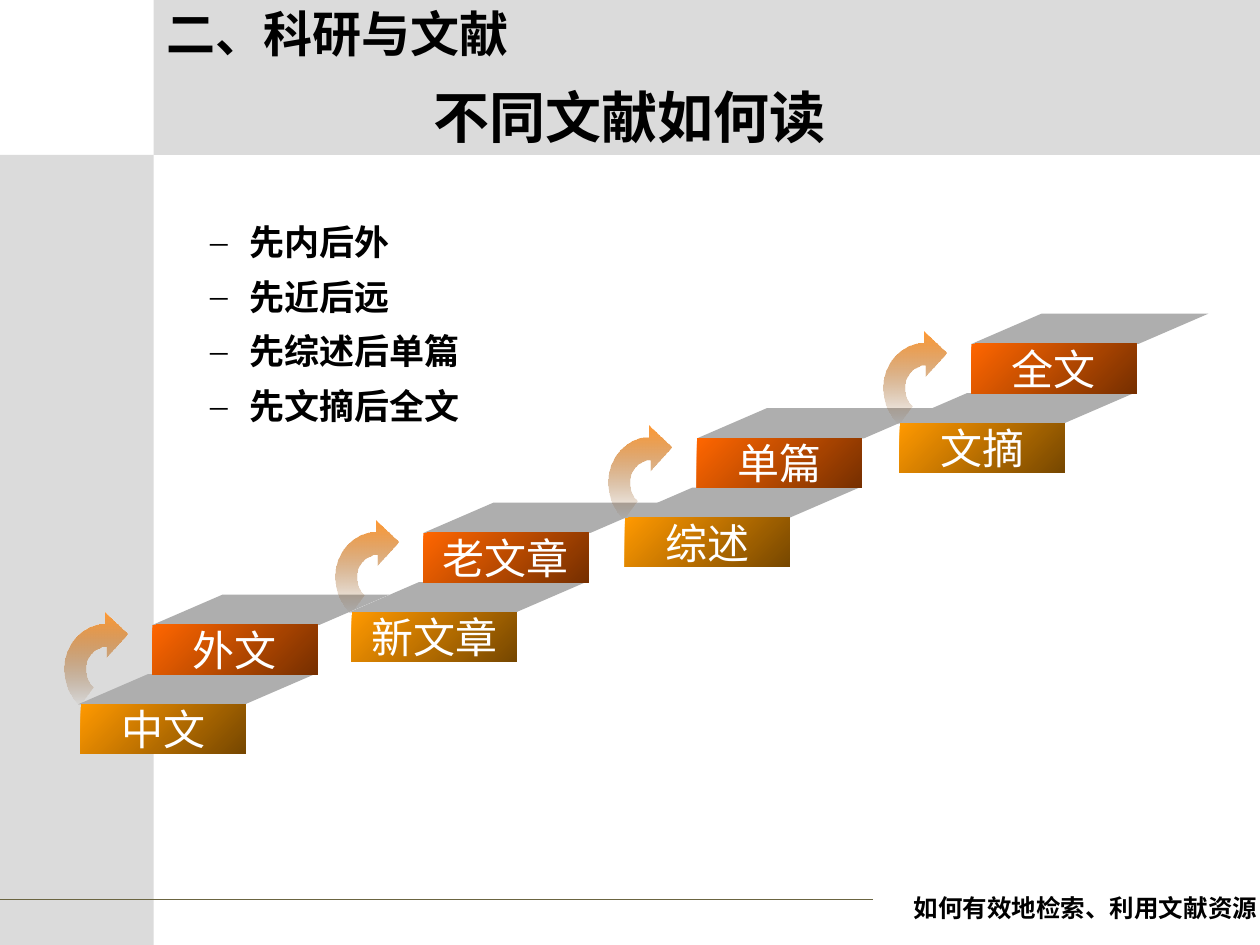
import dataclasses

import pptx
import pptx.dml.color
import pptx.enum.shapes
import pptx.enum.text
import pptx.oxml.ns
import pptx.util
from lxml import etree

Inches = pptx.util.Inches
Pt = pptx.util.Pt
qn = pptx.oxml.ns.qn
SHAPES = pptx.enum.shapes.MSO_SHAPE
ALIGN = pptx.enum.text.PP_ALIGN
MIDDLE = pptx.enum.text.MSO_ANCHOR.MIDDLE

SANS, SERIF = "Noto Sans CJK SC", "Times New Roman"
BLACK, WHITE, PANEL, TREAD = "000000", "FFFFFF", "DBDBDB", "AEAEAE"
LOWER_COLORS = ("FF9900", "764700")
UPPER_COLORS = ("FF6600", "762F00")
ARROW_COLORS = ("FF9933", "764718")
BLOCK_WIDTH, BLOCK_HEIGHT = 1.31, 0.39
TREAD_WIDTH, TREAD_HEIGHT = 1.88, 0.24
STEP_RIGHT, STEP_UP = 0.57, 0.63

# Arrow outline, measured from the top left of the lower block:
# after the start, one point makes a straight line, three make a Bézier curve
ARROW_START = (0.20, -0.46)
ARROW_SEGMENTS = [
    [(0.11, -0.46), (0.03, -0.37), (0.04, -0.27)],
    [(0.04, -0.22), (0.06, -0.17), (0.10, -0.14)],
    [(-0.01, 0.01)],
    [(-0.08, -0.06), (-0.13, -0.16), (-0.13, -0.27)],
    [(-0.14, -0.47), (0.01, -0.64), (0.19, -0.64)],
    [(0.19, -0.73)],
    [(0.37, -0.56)],
    [(0.20, -0.37)],
    [ARROW_START],
]


@dataclasses.dataclass
class Stair:
    left: float
    top: float
    first: str
    then: str


STAIRS = [
    Stair(0.64, 5.59, "中文", "外文"),
    Stair(2.79, 4.86, "新文章", "老文章"),
    Stair(4.96, 4.11, "综述", "单篇"),
    Stair(7.14, 3.36, "文摘", "全文"),
]
READING_RULES = ["先内后外", "先近后远", "先综述后单篇", "先文摘后全文"]


def rgb(color: str) -> pptx.dml.color.RGBColor:
    return pptx.dml.color.RGBColor.from_string(color)


def format_text(paragraph, size: float, font: str, color: str, bold: bool, align=ALIGN.LEFT) -> None:
    paragraph.alignment = align
    for run in paragraph.runs:
        run.font.size = Pt(size)
        run.font.name = font
        run.font.bold = bold
        run.font.color.rgb = rgb(color)
        east_asian = etree.SubElement(run.font._element, qn("a:ea"))
        east_asian.set("typeface", SANS)


def add_filled(shapes, kind, left: float, top: float, width: float, height: float, color: str):
    shape = shapes.add_shape(kind, Inches(left), Inches(top), Inches(width), Inches(height))
    shape.shadow.inherit = False
    shape.fill.solid()
    shape.fill.fore_color.rgb = rgb(color)
    shape.line.fill.background()
    return shape


def fill_gradient(shape, colors: tuple, clockwise_angle: float) -> None:
    shape.fill.gradient()
    shape.fill.gradient_angle = 360 - clockwise_angle
    for stop, color, position in zip(shape.fill.gradient_stops, colors, (0, 1)):
        stop.color.rgb = rgb(color)
        stop.position = position


def add_block(shapes, left: float, top: float, text: str, colors: tuple) -> None:
    block = add_filled(shapes, SHAPES.RECTANGLE, left, top, BLOCK_WIDTH, BLOCK_HEIGHT, colors[0])
    fill_gradient(block, colors, 45)
    frame = block.text_frame
    frame.text = text
    frame.word_wrap = False
    frame.vertical_anchor = MIDDLE
    format_text(frame.paragraphs[0], 24, SANS, WHITE, False, ALIGN.CENTER)


def add_tread(shapes, left: float, block_top: float) -> None:
    tread = add_filled(shapes, SHAPES.PARALLELOGRAM, left, block_top - TREAD_HEIGHT,
                       TREAD_WIDTH, TREAD_HEIGHT, TREAD)
    tread.adjustments[0] = 2.313


def bend_segments(shape, segments: list) -> None:
    """Join each three straight pieces of a curved segment into one Bézier curve."""
    lines = iter(list(shape._element.spPr.iter(qn("a:lnTo"))))
    for segment in segments:
        pieces = [next(lines) for _ in segment]
        if len(pieces) == 3:
            curve = etree.Element(qn("a:cubicBezTo"))
            pieces[0].addprevious(curve)
            for piece in pieces:
                curve.append(piece[0])
                piece.getparent().remove(piece)


def add_arrow(shapes, left: float, top: float) -> None:
    def place(point: tuple) -> tuple:
        return Inches(left + point[0]), Inches(top + point[1])

    builder = shapes.build_freeform(*place(ARROW_START))
    builder.add_line_segments([place(point) for segment in ARROW_SEGMENTS for point in segment],
                              close=True)
    arrow = builder.convert_to_shape()
    bend_segments(arrow, ARROW_SEGMENTS)
    arrow.shadow.inherit = False
    fill_gradient(arrow, ARROW_COLORS, 90)
    # The lower end of the gradient is fully transparent
    last_color = list(arrow._element.spPr.iter(qn("a:srgbClr")))[-1]
    etree.SubElement(last_color, qn("a:alpha")).set("val", "0")
    arrow.line.fill.background()


def add_stair(slide, stair: Stair) -> None:
    shapes = slide.shapes.add_group_shape().shapes
    upper_left, upper_top = stair.left + STEP_RIGHT, stair.top - STEP_UP
    add_tread(shapes, stair.left - 0.02, stair.top)
    add_block(shapes, stair.left, stair.top, stair.first, LOWER_COLORS)
    add_tread(shapes, upper_left, upper_top)
    add_block(shapes, upper_left, upper_top, stair.then, UPPER_COLORS)
    add_arrow(shapes, stair.left, stair.top)


def add_text_box(slide, left: float, top: float, width: float, height: float):
    box = slide.shapes.add_textbox(Inches(left), Inches(top), Inches(width), Inches(height))
    box.text_frame.word_wrap = True
    return box.text_frame


def add_label(slide, place: tuple, text: str, size: float, align):
    frame = add_text_box(slide, *place)
    frame.vertical_anchor = MIDDLE
    frame.text = text
    format_text(frame.paragraphs[0], size, SERIF, BLACK, True, align)
    return frame


def add_rules(slide) -> None:
    frame = add_text_box(slide, 1.07, 1.59, 9.08, 5.17)
    frame.margin_top = Inches(0.06)
    frame.text = "\n".join(READING_RULES)
    for paragraph in frame.paragraphs:
        paragraph.level = 1
        paragraph.line_spacing = Pt(31.2)
        properties = paragraph._p.get_or_add_pPr()
        properties.set("marL", str(Inches(0.81)))
        properties.set("indent", str(Inches(-0.31)))
        etree.SubElement(properties, qn("a:buFont")).set("typeface", SERIF)
        etree.SubElement(properties, qn("a:buChar")).set("char", "–")
        format_text(paragraph, 20, SANS, BLACK, True)


def main() -> None:
    presentation = pptx.Presentation()
    presentation.slide_width, presentation.slide_height = Inches(10), Inches(7.5)
    slide = presentation.slides.add_slide(presentation.slide_layouts[5])

    # Background panels and footer rule
    add_filled(slide.shapes, SHAPES.RECTANGLE, 0, 1.23, 1.22, 6.27, PANEL)
    add_filled(slide.shapes, SHAPES.RECTANGLE, 1.22, 0, 8.78, 1.23, PANEL)
    rule = slide.shapes.add_connector(pptx.enum.shapes.MSO_CONNECTOR.STRAIGHT,
                                      Inches(0), Inches(7.14), Inches(6.93), Inches(7.14))
    rule.line.color.rgb = rgb("6B6541")
    rule.line.width = Pt(0.75)
    etree.SubElement(rule._element.spPr, qn("a:effectLst"))

    # Reading rules and the staircase
    add_rules(slide)
    for stair in STAIRS:
        add_stair(slide, stair)

    # Title, brought in front of the panels
    title = slide.shapes.title
    title.left, title.top, title.width, title.height = map(Inches, (0.5, 0.3, 9, 1.25))
    title.text_frame.text = "不同文献如何读"
    title.text_frame.vertical_anchor = MIDDLE
    format_text(title.text_frame.paragraphs[0], 32, SERIF, BLACK, True, ALIGN.CENTER)
    title.element.getparent().append(title.element)

    # Section heading and footer
    add_label(slide, (1.22, 0, 7.05, 0.52), "二、科研与文献", 28, ALIGN.LEFT)
    footer = add_label(slide, (6.81, 6.94, 3.17, 0.52), "如何有效地检索、利用文献资源", 14, ALIGN.RIGHT)
    footer.margin_right = 0

    presentation.save("out.pptx")


if __name__ == "__main__":
    main()
